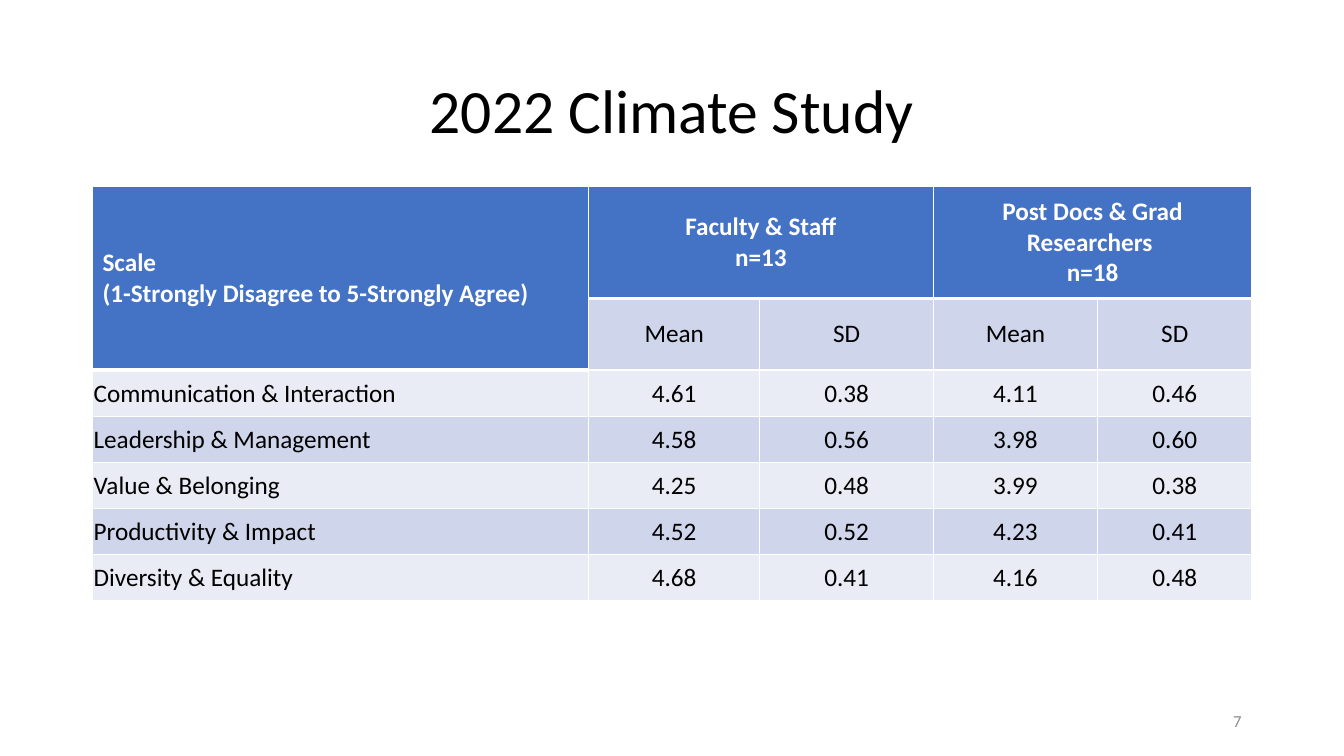
import pptx
import pptx.dml.color
import pptx.enum.text
import pptx.oxml
import pptx.oxml.ns
import pptx.util

Cm, Pt = pptx.util.Cm, pptx.util.Pt
Align = pptx.enum.text.PP_ALIGN
MIDDLE = pptx.enum.text.MSO_ANCHOR.MIDDLE

COLORS = {
    "header": "4472C4",
    "dark band": "CFD5EA",
    "light band": "E9EBF5",
    "white": "FFFFFF",
    "black": "000000",
    "gray": "8C8C8C",
}
COLUMN_WIDTHS = [12.5, 4.32, 4.37, 4.14, 3.89]
ROW_HEIGHTS = [2.82] + [1.16] * 6
HEADERS = [
    ["Scale\n(1-Strongly Disagree to 5-Strongly Agree)", "Faculty & Staff\nn=13", "",
     "Post Docs & Grad Researchers \nn=18", ""],
    ["", "Mean", "SD", "Mean", "SD"],
]
SCORES = [
    ["Communication & Interaction", "4.61", "0.38", "4.11", "0.46"],
    ["Leadership & Management", "4.58", "0.56", "3.98", "0.60"],
    ["Value & Belonging", "4.25", "0.48", "3.99", "0.38"],
    ["Productivity & Impact", "4.52", "0.52", "4.23", "0.41"],
    ["Diversity & Equality", "4.68", "0.41", "4.16", "0.48"],
]
MERGES = [((0, 0), (1, 0)), ((0, 1), (0, 2)), ((0, 3), (0, 4))]


class SlideBuilder:
    """Holds the style and the current slide."""

    font_name = "Calibri"

    def __init__(self, presentation):
        self.slide = presentation.slides.add_slide(presentation.slide_layouts[5])

    def color(self, name):
        return pptx.dml.color.RGBColor.from_string(COLORS[name])

    def place(self, shape, left, top, width, height):
        box = {"left": left, "top": top, "width": width, "height": height}
        for name, value in box.items():
            setattr(shape, name, Cm(value))

    def fill_text(self, text_frame, text, size, color, align, bold=False, spacing=1.0):
        text_frame.text = text
        text_frame.word_wrap = True
        font_format = {"name": self.font_name, "size": Pt(size), "bold": bold}
        for paragraph in text_frame.paragraphs:
            paragraph.alignment = align
            paragraph.line_spacing = spacing
            for run in paragraph.runs:
                for name, value in font_format.items():
                    setattr(run.font, name, value)
                run.font.color.rgb = self.color(color)

    def title(self, text, *box):
        shape = self.slide.shapes.title
        self.place(shape, *box)
        self.fill_text(shape.text_frame, text, 44, "black", Align.CENTER, spacing=0.9)
        shape.text_frame.vertical_anchor = MIDDLE

    def page_number(self, text, *box):
        shape = self.slide.shapes.add_textbox(*map(Cm, box))
        self.fill_text(shape.text_frame, text, 12, "gray", Align.RIGHT)
        shape.text_frame.vertical_anchor = MIDDLE

    def borders(self, cell, **widths):
        properties = cell._tc.get_or_add_tcPr()
        for side in "LRTB":
            width = Pt(widths.get(side, 1))
            properties.append(pptx.oxml.parse_xml(
                f'<a:ln{side} {pptx.oxml.ns.nsdecls("a")} w="{width}"><a:solidFill>'
                f'<a:srgbClr val="{COLORS["white"]}"/></a:solidFill></a:ln{side}>'))

    def cell(self, cell, text, row, column):
        is_header = row == 0 or (row == 1 and column == 0)
        band = "dark band" if row % 2 else "light band"
        under_header = row == 1 or (row == 2 and column == 0)
        self.borders(cell, B=3 if is_header else 1, T=3 if under_header else 1)
        cell.fill.solid()
        cell.fill.fore_color.rgb = self.color("header" if is_header else band)
        cell.vertical_anchor = MIDDLE
        if row > 1:
            margins = {"margin_left": 0.03, "margin_right": 0.03,
                       "margin_top": 0.03, "margin_bottom": 0}
            for name, value in margins.items():
                setattr(cell, name, Cm(value))
        if text:
            self.fill_text(cell.text_frame, text, 18, "white" if is_header else "black",
                           Align.CENTER if column else Align.LEFT, bold=is_header)

    def table(self, rows, left, top):
        table = self.slide.shapes.add_table(
            len(rows), len(COLUMN_WIDTHS), Cm(left), Cm(top),
            Cm(sum(COLUMN_WIDTHS)), Cm(sum(ROW_HEIGHTS))).table
        for column, width in zip(table.columns, COLUMN_WIDTHS):
            column.width = Cm(width)
        for row, height in zip(table.rows, ROW_HEIGHTS):
            row.height = Cm(height)
        for start, end in MERGES:
            table.cell(*start).merge(table.cell(*end))
        for row, texts in enumerate(rows):
            for column, text in enumerate(texts):
                self.cell(table.cell(row, column), text, row, column)


def main():
    presentation = pptx.Presentation()
    presentation.slide_width = Cm(33.87)
    presentation.slide_height = Cm(19.05)
    builder = SlideBuilder(presentation)

    # Title
    builder.title("2022 Climate Study", 2.33, 1.01, 29.21, 3.68)
    # Survey results
    builder.table(HEADERS + SCORES, 2.33, 4.7)
    # Page number
    builder.page_number("7", 23.92, 17.66, 7.62, 1.01)

    presentation.save("out.pptx")


if __name__ == "__main__":
    main()
